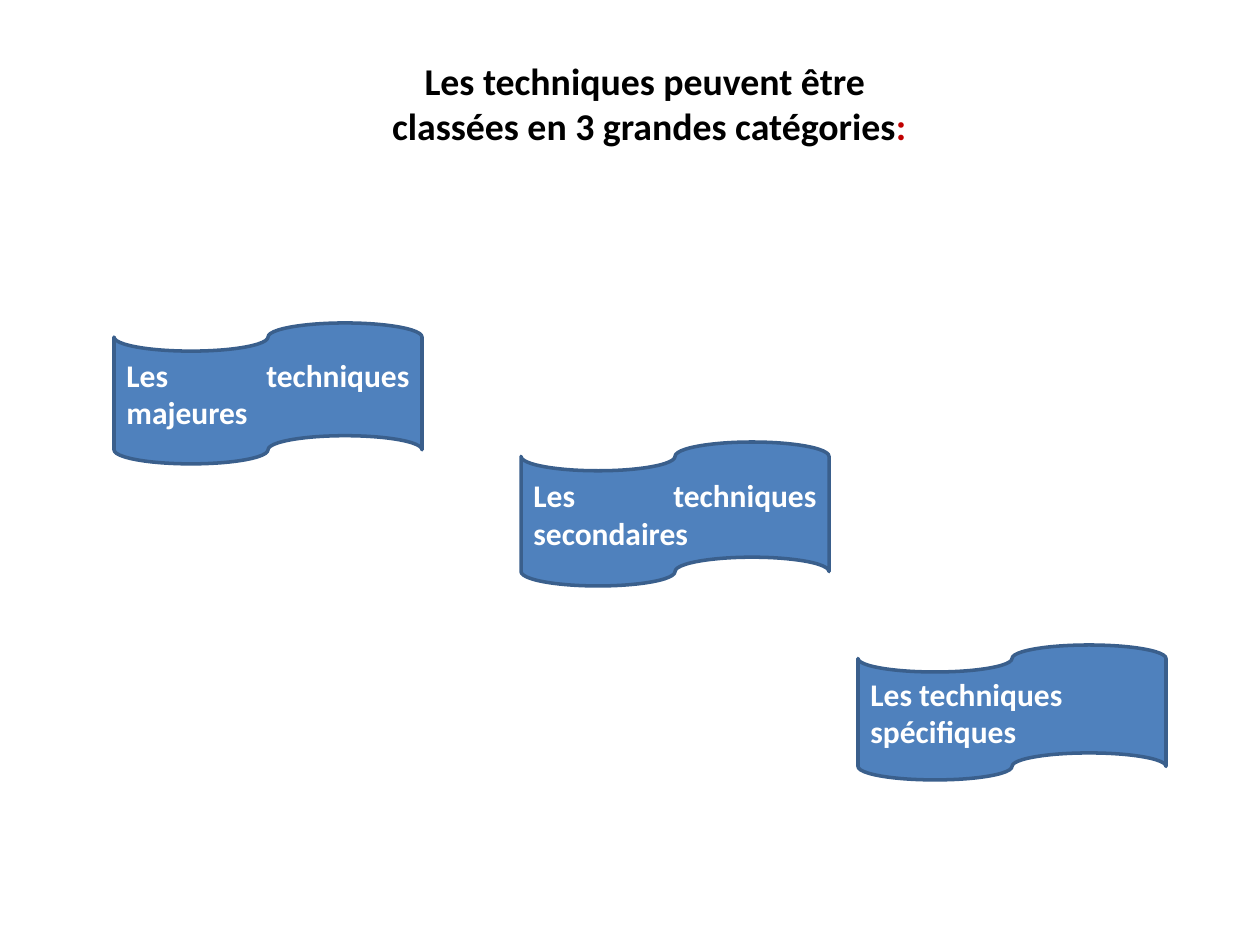
from pptx import Presentation
from pptx import util as u
from pptx.dml.color import RGBColor
from pptx.enum import shapes, text

PX_PER_INCH = 126
FONT = "Calibri"
BLACK, WHITE, RED = "000000", "FFFFFF", "C00000"
BLUE, DARK_BLUE = "4F81BD", "3A5F8C"


def px(length):
    return u.Emu(round(length * u.Inches(1) / PX_PER_INCH))


def color(hex_string):
    return RGBColor.from_string(hex_string)


def add_run(paragraph, words, size, hex_string):
    run = paragraph.add_run()
    run.text = words
    run.font.name = FONT
    run.font.size = u.Pt(size)
    run.font.bold = True
    run.font.color.rgb = color(hex_string)


def prepare_text(shape, alignment):
    """Wrap and centre the text vertically; return its first paragraph."""
    frame = shape.text_frame
    frame.word_wrap = True
    frame.vertical_anchor = text.MSO_ANCHOR.MIDDLE
    paragraph = frame.paragraphs[0]
    paragraph.alignment = alignment
    return paragraph


def add_title(slide, left, top, width, height):
    box = slide.shapes.add_textbox(px(left), px(top), px(width), px(height))
    paragraph = prepare_text(box, text.PP_ALIGN.CENTER)
    add_run(paragraph, "Les techniques peuvent être", 21.6, BLACK)
    paragraph.add_line_break()
    add_run(paragraph, " classées en 3 grandes catégories", 21.6, BLACK)
    add_run(paragraph, ":", 21.6, RED)


def add_category(slide, left, top, width, height, label, alignment):
    tape = slide.shapes.add_shape(
        shapes.MSO_SHAPE.FLOWCHART_PUNCHED_TAPE,
        px(left), px(top), px(width), px(height))
    tape.shadow.inherit = False
    tape.fill.solid()
    tape.fill.fore_color.rgb = color(BLUE)
    tape.line.color.rgb = color(DARK_BLUE)
    tape.line.width = u.Pt(2)
    add_run(prepare_text(tape, alignment), label, 18, WHITE)


def main():
    presentation = Presentation()
    presentation.slide_width = px(1260)
    presentation.slide_height = px(945)
    slide = presentation.slides.add_slide(presentation.slide_layouts[6])

    # Title
    add_title(slide, 108, 49, 1074, 108)

    # Three categories, stepping down to the right
    justified, left_aligned = text.PP_ALIGN.JUSTIFY, text.PP_ALIGN.LEFT
    categories = [
        (114, 323, 141, "Les techniques majeures", justified),
        (521, 442, 144, "Les techniques secondaires", justified),
        (858, 645, 135, "Les techniques spécifiques", left_aligned),
    ]
    for left, top, height, label, alignment in categories:
        add_category(slide, left, top, 308, height, label, alignment)

    presentation.save("out.pptx")


if __name__ == "__main__":
    main()
